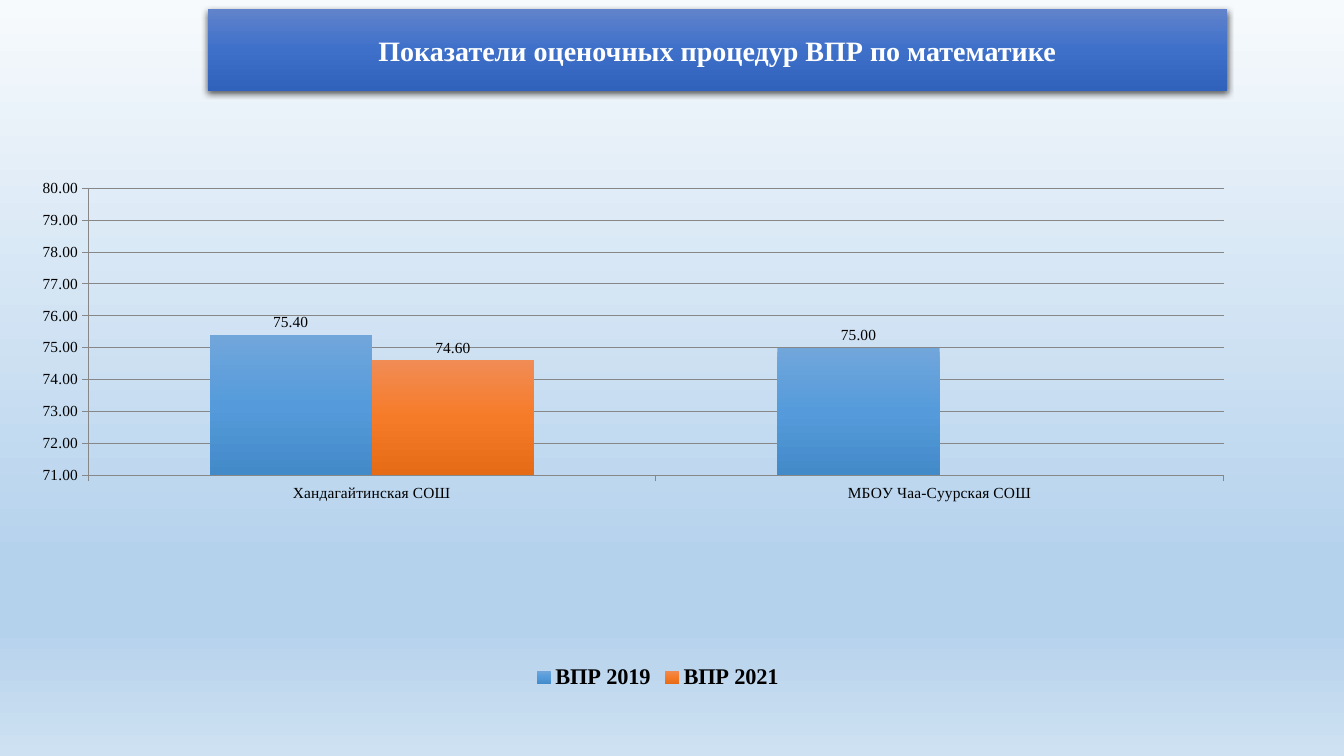
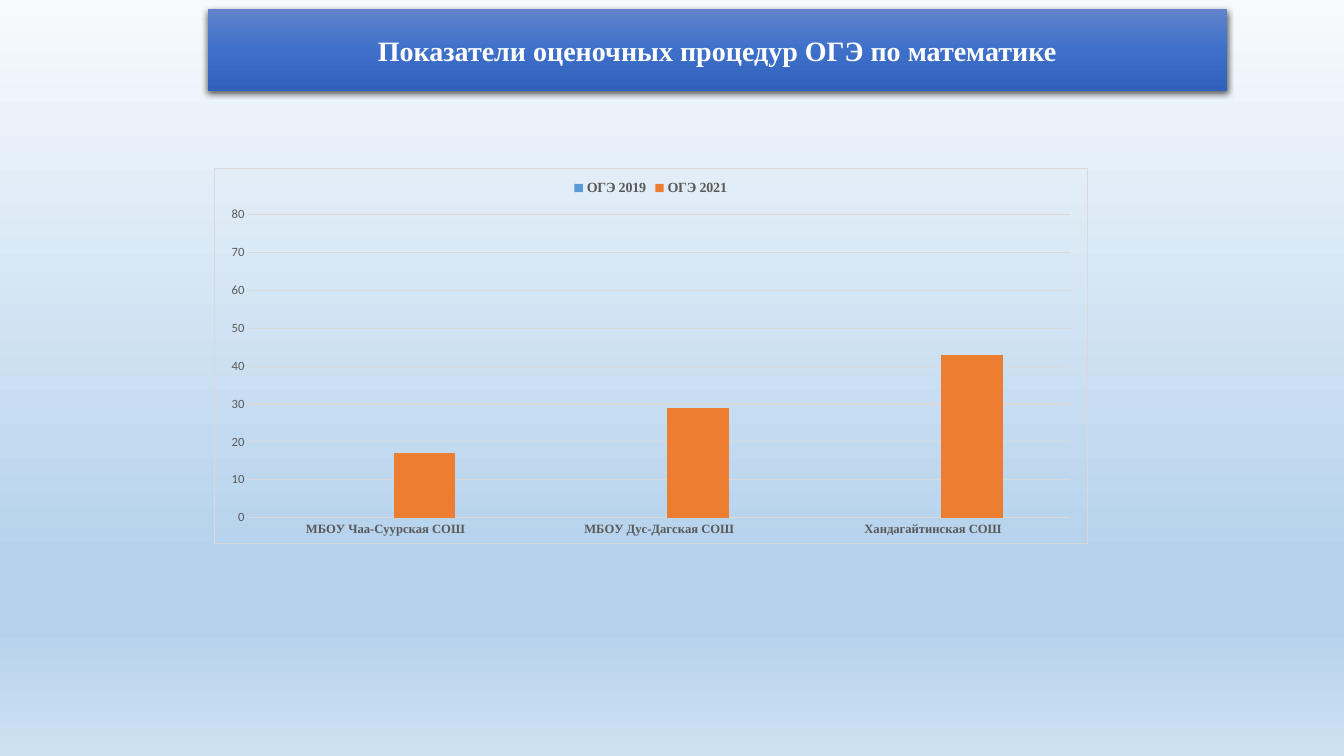
"""Two slides comparing school results in mathematics assessments."""
from pptx import Presentation
from pptx.chart.data import CategoryChartData
from pptx.dml.color import RGBColor
from pptx.enum.chart import XL_CHART_TYPE, XL_LABEL_POSITION, XL_LEGEND_POSITION, XL_TICK_MARK
from pptx.enum.text import MSO_ANCHOR, PP_ALIGN
from pptx.oxml import parse_xml
from pptx.oxml.ns import nsdecls
from pptx.util import Inches, Pt

WHITE = RGBColor(0xFF, 0xFF, 0xFF)
BLACK = RGBColor(0, 0, 0)
AXIS_GRAY = RGBColor(0x87, 0x87, 0x87)
TEXT_GRAY = RGBColor(0x59, 0x59, 0x59)
PALE_GRAY = RGBColor(0xD9, 0xD9, 0xD9)
BLUE = RGBColor(0x5B, 0x9B, 0xD5)
ORANGE = RGBColor(0xED, 0x7D, 0x31)
SKY = [(0, RGBColor(0xF7, 0xFA, 0xFD)), (74, RGBColor(0xB5, 0xD2, 0xEC)),
       (83, RGBColor(0xB5, 0xD2, 0xEC)), (100, RGBColor(0xCE, 0xE1, 0xF2))]
BANNER = [(0, RGBColor(0x61, 0x83, 0xCB)), (50, RGBColor(0x3E, 0x70, 0xCA)),
          (100, RGBColor(0x30, 0x62, 0xBB))]
BLUE_BARS = [(0, RGBColor(0x71, 0xA6, 0xDB)), (50, RGBColor(0x55, 0x9B, 0xDB)),
             (100, RGBColor(0x43, 0x8A, 0xC9))]
ORANGE_BARS = [(0, RGBColor(0xF1, 0x8C, 0x55)), (50, RGBColor(0xF6, 0x7B, 0x28)),
               (100, RGBColor(0xE5, 0x6B, 0x17))]
SERIF = "Times New Roman"
SANS = "Calibri"

deck = Presentation()
deck.slide_width, deck.slide_height = Inches(13.33), Inches(7.5)


def percent_box(left, top, width, height):
    """Turn percentages of the slide into lengths."""
    return [int(side * share / 100) for side, share in zip(
        (deck.slide_width, deck.slide_height) * 2, (left, top, width, height))]


def fill_downwards(fill, owner, stops):
    """Give a fill a vertical gradient with any number of stops."""
    fill.gradient()
    fill.gradient_angle = 270
    stop_list = owner.xpath(".//a:gsLst")[0]
    for old_stop in list(stop_list):
        stop_list.remove(old_stop)
    for position, color in stops:
        stop_list.append(parse_xml(
            f'<a:gs {nsdecls("a")} pos="{position * 1000}"><a:srgbClr val="{color}"/></a:gs>'))


master = deck.slide_master
fill_downwards(master.background.fill, master._element, SKY)

topics = [
    ("Показатели оценочных процедур ВПР по математике",
     ["Хандагайтинская СОШ", "МБОУ Чаа-Суурская СОШ"],
     [("ВПР 2019", (75.4, 75)), ("ВПР 2021", (74.6, None))],
     (0.6, 20.67, 100.83, 84.4), XL_LEGEND_POSITION.BOTTOM),
    ("Показатели оценочных процедур ОГЭ по математике",
     ["МБОУ Чаа-Суурская СОШ", "МБОУ Дус-Дагская СОШ", "Хандагайтинская СОШ"],
     [("ОГЭ 2019", (None, None, None)), ("ОГЭ 2021", (17, 29, 43))],
     (15.9, 22.27, 65.04, 49.73), XL_LEGEND_POSITION.TOP),
]
charts = []
for heading, schools, results, area, legend_side in topics:
    slide = deck.slides.add_slide(deck.slide_layouts[5])
    banner = slide.shapes.title
    banner.left, banner.top, banner.width, banner.height = percent_box(15.45, 1.2, 75.84, 10.8)
    fill_downwards(banner.fill, banner._element, BANNER)
    banner._element.spPr.append(parse_xml(
        f'<a:effectLst {nsdecls("a")}><a:outerShdw blurRad="{Pt(4.5)}" dist="{Pt(1.5)}" '
        'dir="5400000" algn="ctr" rotWithShape="0"><a:srgbClr val="000000">'
        '<a:alpha val="63000"/></a:srgbClr></a:outerShdw></a:effectLst>'))
    banner.text_frame.text = heading
    banner.text_frame.vertical_anchor = MSO_ANCHOR.MIDDLE
    caption = banner.text_frame.paragraphs[0]
    caption.alignment = PP_ALIGN.CENTER
    lettering = caption.runs[0].font
    lettering.name, lettering.size, lettering.bold = SERIF, Pt(20), True
    lettering.color.rgb = WHITE

    data = CategoryChartData()
    data.categories = schools
    for exam, scores in results:
        data.add_series(exam, scores)
    chart = slide.shapes.add_chart(
        XL_CHART_TYPE.COLUMN_CLUSTERED, *percent_box(*area), data).chart
    chart.has_title = False
    chart.has_legend = True
    chart.legend.position = legend_side
    chart.legend.include_in_layout = False
    chart.legend.font.name, chart.legend.font.bold = SERIF, True
    chart.plots[0].vary_by_categories = False
    chart.value_axis.maximum_scale = 80
    chart.value_axis.has_major_gridlines = True
    charts.append(chart)

vpr, oge = charts
for chart, outline in ((vpr, "<a:noFill/>"),
                       (oge, f'<a:solidFill><a:srgbClr val="{PALE_GRAY}"/></a:solidFill>')):
    chart._chartSpace.chart.addnext(parse_xml(
        f'<c:spPr {nsdecls("c", "a")}><a:noFill/><a:ln w="{Pt(0.75)}">{outline}</a:ln></c:spPr>'))
    chart._chartSpace.chart.plotArea.append(parse_xml(
        f'<c:spPr {nsdecls("c", "a")}><a:noFill/></c:spPr>'))

vpr.font.name, vpr.font.size = SERIF, Pt(11)
vpr.font.color.rgb = BLACK
vpr.legend.font.size = Pt(16)
vpr.legend.font.color.rgb = BLACK
vpr.value_axis.minimum_scale = 71
vpr.value_axis.major_unit = 1
vpr.value_axis.tick_labels.number_format = "0.00"
vpr.value_axis.tick_labels.number_format_is_linked = False
for axis in (vpr.category_axis, vpr.value_axis):
    axis.major_tick_mark = XL_TICK_MARK.OUTSIDE
for rule in (vpr.category_axis, vpr.value_axis, vpr.value_axis.major_gridlines):
    rule.format.line.color.rgb = AXIS_GRAY
    rule.format.line.width = Pt(0.5)
vpr.plots[0].gap_width = 150
vpr.plots[0].overlap = 0
for exam, stops in zip(vpr.plots[0].series, (BLUE_BARS, ORANGE_BARS)):
    fill_downwards(exam.format.fill, exam._element, stops)
    labels = exam.data_labels
    labels.show_value = True
    labels.number_format, labels.number_format_is_linked = "0.00", False
    labels.position = XL_LABEL_POSITION.OUTSIDE_END
plot_area = vpr._chartSpace.chart.plotArea
legend_box = vpr.legend._element
for part in (plot_area, legend_box):
    for old_layout in part.xpath("c:layout"):
        part.remove(old_layout)
plot_area.insert(0, parse_xml(
    f'<c:layout {nsdecls("c")}><c:manualLayout><c:layoutTarget val="inner"/>'
    '<c:xMode val="edge"/><c:yMode val="edge"/><c:x val="0.059"/><c:y val="0.05"/>'
    '<c:w val="0.838"/><c:h val="0.45"/></c:manualLayout></c:layout>'))
legend_box.xpath("c:legendPos")[0].addnext(parse_xml(
    f'<c:layout {nsdecls("c")}><c:manualLayout><c:xMode val="edge"/><c:yMode val="edge"/>'
    '<c:x val="0.385"/><c:y val="0.79"/></c:manualLayout></c:layout>'))

oge.font.name, oge.font.size = SANS, Pt(10)
oge.legend.font.size = Pt(10)
oge.legend.font.color.rgb = TEXT_GRAY
for axis, typeface, bold in ((oge.category_axis, SERIF, True), (oge.value_axis, SANS, False)):
    axis.major_tick_mark = XL_TICK_MARK.NONE
    lettering = axis.tick_labels.font
    lettering.name, lettering.size, lettering.bold = typeface, Pt(9), bold
    lettering.color.rgb = TEXT_GRAY
oge.value_axis.minimum_scale = 0
oge.value_axis.major_unit = 10
oge.value_axis.format.line.fill.background()
for rule in (oge.category_axis, oge.value_axis.major_gridlines):
    rule.format.line.color.rgb = PALE_GRAY
    rule.format.line.width = Pt(0.75)
oge.plots[0].gap_width = 219
oge.plots[0].overlap = -27
for exam, color in zip(oge.plots[0].series, (BLUE, ORANGE)):
    exam.format.fill.solid()
    exam.format.fill.fore_color.rgb = color

deck.save("out.pptx")
